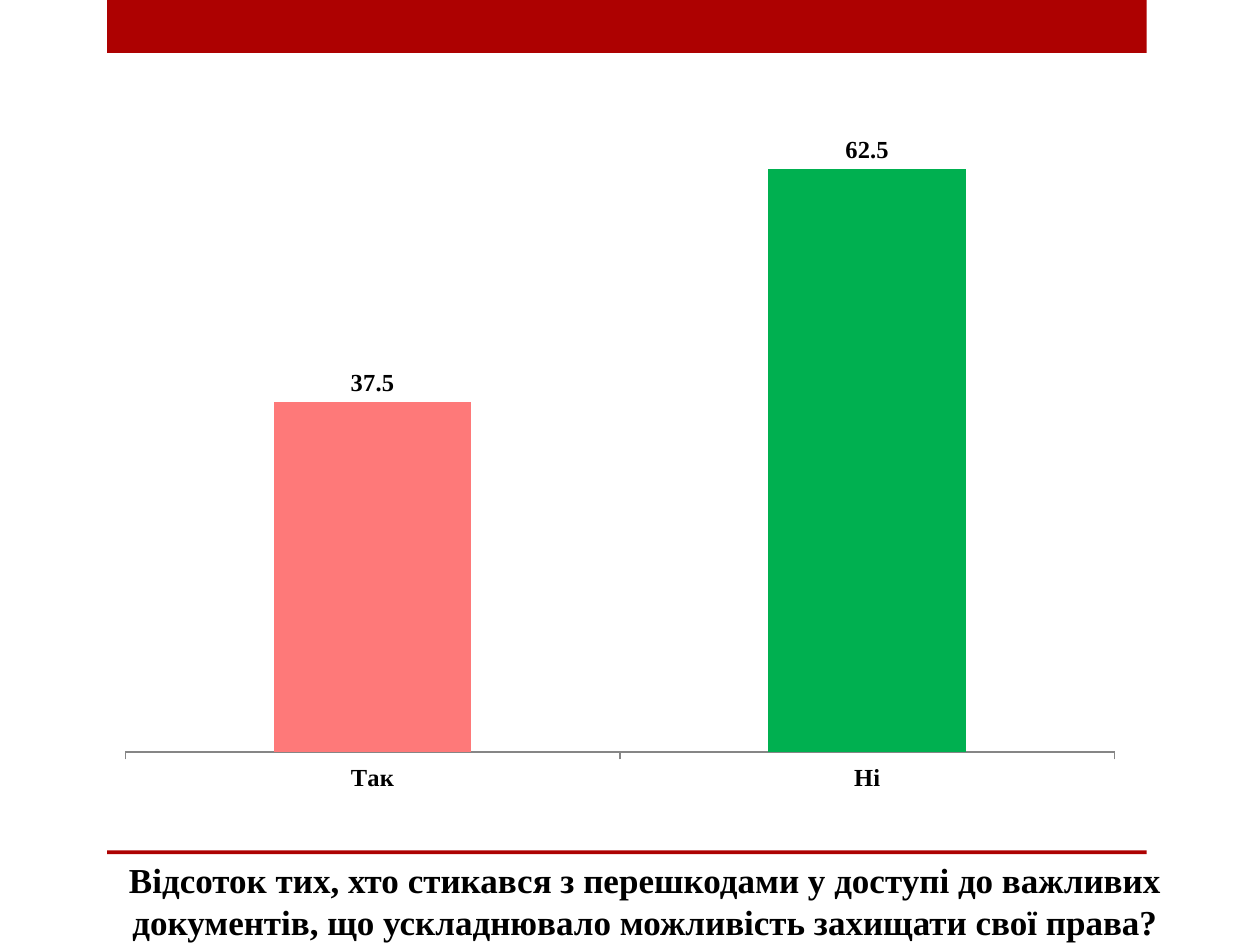
from dataclasses import dataclass

from lxml.etree import SubElement
from pptx import Presentation
from pptx.chart.data import CategoryChartData
from pptx.dml.color import RGBColor
from pptx.enum.chart import XL_CHART_TYPE, XL_LABEL_POSITION, XL_TICK_LABEL_POSITION, XL_TICK_MARK
from pptx.enum.shapes import MSO_SHAPE
from pptx.enum.text import MSO_ANCHOR, PP_ALIGN
from pptx.oxml.ns import qn
from pptx.util import Inches, Pt


@dataclass(frozen=True)
class Theme:
    font: str = "Times New Roman"
    accent: RGBColor = RGBColor(0xAD, 0x01, 0x01)
    text: RGBColor = RGBColor(0, 0, 0)
    axis: RGBColor = RGBColor(0x86, 0x86, 0x86)
    yes: RGBColor = RGBColor(0xFE, 0x79, 0x79)
    no: RGBColor = RGBColor(0x00, 0xB0, 0x50)
    title_size: Pt = Pt(20)
    chart_size: Pt = Pt(14)


THEME = Theme()
QUESTION = ("Відсоток тих, хто стикався з перешкодами у доступі до важливих документів, "
            "що ускладнювало можливість захищати свої права?")
ANSWERS = [("Так", 37.5, THEME.yes), ("Ні", 62.5, THEME.no)]
NUMBER_FORMAT = "###0.0"


def style_font(font, size):
    font.name = THEME.font
    font.size = size
    font.bold = True
    font.color.rgb = THEME.text


def add_band(page, left, top, width, height):
    band = page.shapes.add_shape(MSO_SHAPE.RECTANGLE, left, top, width, height)
    band.shadow.inherit = False
    band.fill.solid()
    band.fill.fore_color.rgb = THEME.accent
    band.line.fill.background()


def add_frame(page, left, top, width, height):
    """Thick band at the top of the region and a thin rule at its bottom."""
    rule_height = Inches(0.03)
    add_band(page, left, top, width, Inches(0.42))
    add_band(page, left, top + height - rule_height, width, rule_height)


def add_question(page, left, top, width, height):
    box = page.shapes.add_textbox(left, top, width, height)
    frame = box.text_frame
    frame.word_wrap = True
    frame.vertical_anchor = MSO_ANCHOR.BOTTOM
    para = frame.paragraphs[0]
    para.alignment = PP_ALIGN.CENTER
    span = para.add_run()
    span.text = QUESTION
    style_font(span.font, THEME.title_size)


def set_plot_layout(chart, **fractions):
    """Fix the inner plot area as fractions of the chart box."""
    plot_area = chart.plots[0]._element.getparent()
    layout = plot_area.find(qn("c:layout"))
    if layout is None:
        layout = SubElement(plot_area, qn("c:layout"))
        plot_area.insert(0, layout)
    manual = SubElement(layout, qn("c:manualLayout"))
    settings = {"layoutTarget": "inner", "xMode": "edge", "yMode": "edge", **fractions}
    for name, value in settings.items():
        SubElement(manual, qn(f"c:{name}")).set("val", str(value))


def add_answer_chart(page, left, top, width, height):
    data = CategoryChartData(number_format=NUMBER_FORMAT)
    data.categories = [answer for answer, _, _ in ANSWERS]
    data.add_series("Series 1", [value for _, value, _ in ANSWERS])
    chart = page.shapes.add_chart(
        XL_CHART_TYPE.COLUMN_CLUSTERED, left, top, width, height, data).chart
    chart.has_legend = False
    chart.has_title = False
    style_font(chart.font, THEME.chart_size)
    set_plot_layout(chart, x=0.02, y=0.02, w=0.96, h=0.9)

    # Axes
    value_axis = chart.value_axis
    value_axis.minimum_scale = 0
    value_axis.maximum_scale = 70
    value_axis.has_major_gridlines = False
    value_axis.visible = False
    category_axis = chart.category_axis
    category_axis.major_tick_mark = XL_TICK_MARK.OUTSIDE
    category_axis.tick_label_position = XL_TICK_LABEL_POSITION.NEXT_TO_AXIS
    category_axis.format.line.color.rgb = THEME.axis

    # Columns and their values
    plot = chart.plots[0]
    plot.gap_width = 150
    plot.vary_by_categories = False
    series = plot.series[0]
    series.format.fill.solid()
    series.format.fill.fore_color.rgb = THEME.accent
    for index, (_, _, color) in enumerate(ANSWERS):
        fill = series.points[index].format.fill
        fill.solid()
        fill.fore_color.rgb = color
    labels = series.data_labels
    labels.show_value = True
    labels.number_format = NUMBER_FORMAT
    labels.number_format_is_linked = False
    labels.position = XL_LABEL_POSITION.OUTSIDE_END
    style_font(labels.font, THEME.chart_size)


def main():
    deck = Presentation()
    deck.slide_width = Inches(10)
    deck.slide_height = Inches(7.5)
    page = deck.slides.add_slide(deck.slide_layouts[6])
    add_frame(page, Inches(0.85), Inches(0), Inches(8.25), Inches(6.78))
    add_question(page, Inches(0.26), Inches(6.83), Inches(9.72), Inches(0.7))
    add_answer_chart(page, Inches(0.83), Inches(0.67), Inches(8.18), Inches(5.76))
    deck.save("out.pptx")


if __name__ == "__main__":
    main()
